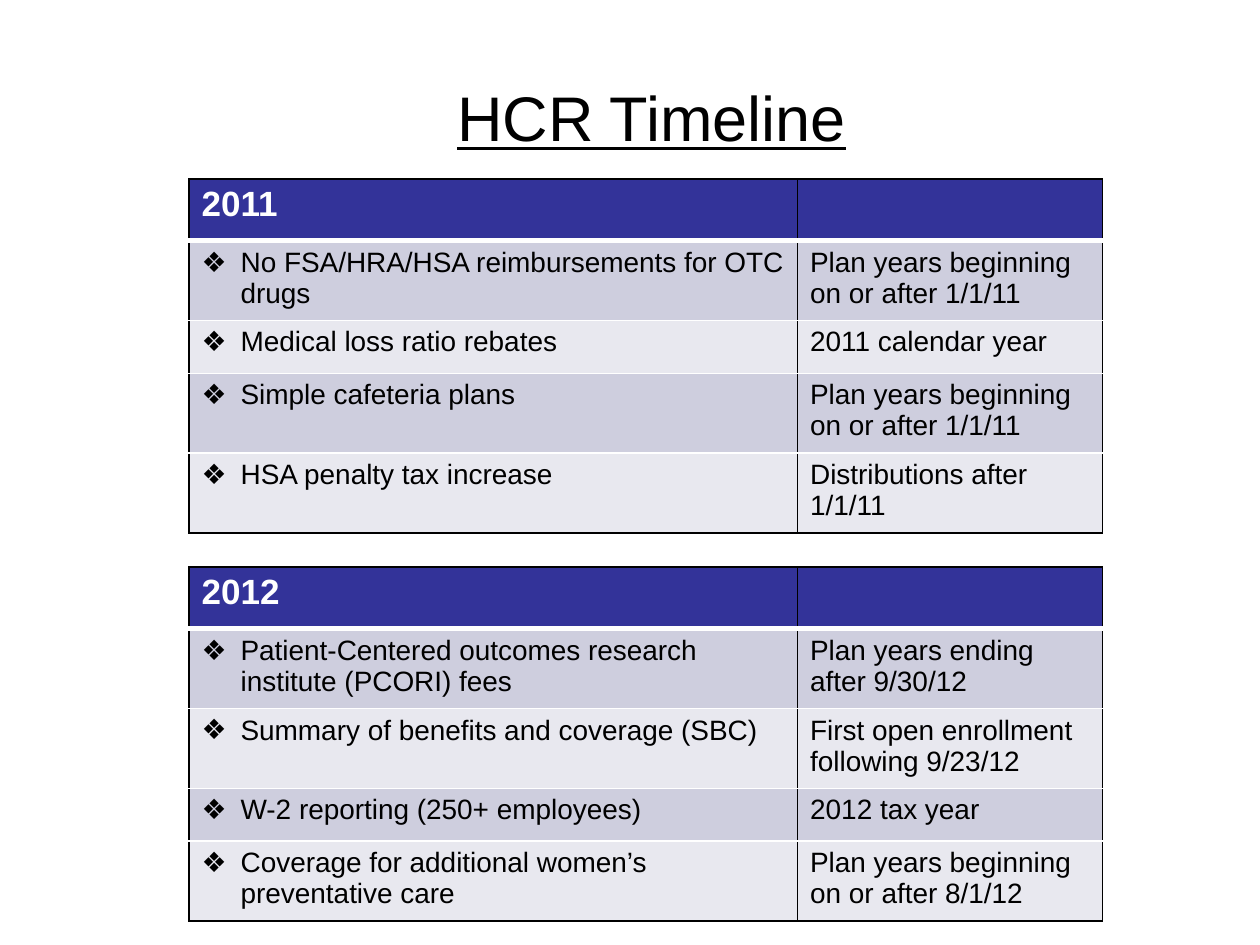
from lxml.etree import SubElement
from pptx import Presentation
from pptx.dml.color import RGBColor
from pptx.enum.text import MSO_ANCHOR, PP_ALIGN
from pptx.oxml import parse_xml
from pptx.oxml.ns import nsdecls, qn
from pptx.util import Inches, Pt

TITLE = "HCR Timeline"
YEARS = [
    ("2011", 1.42, [
        ("No FSA/HRA/HSA reimbursements for OTC drugs", "Plan years beginning on or after 1/1/11"),
        ("Medical loss ratio rebates", "2011 calendar year"),
        ("Simple cafeteria plans", "Plan years beginning on or after 1/1/11"),
        ("HSA penalty tax increase", "Distributions after 1/1/11"),
    ]),
    ("2012", 4.5, [
        ("Patient-Centered outcomes research institute (PCORI) fees", "Plan years ending after 9/30/12"),
        ("Summary of benefits and coverage (SBC)", "First open enrollment following 9/23/12"),
        ("W-2 reporting (250+ employees)", "2012 tax year"),
        ("Coverage for additional women’s preventative care", "Plan years beginning on or after 8/1/12"),
    ]),
]
COLORS = {"text": "000000", "header": "333399", "light": "FFFFFF",
          "odd": "CECEDE", "even": "E8E8EF"}
FONT = "Arial"
TABLE_LEFT = 1.5
COLUMN_WIDTHS = (4.83, 2.42)
HEADER_HEIGHT, ROW_HEIGHT = 0.49, 0.42
BULLET_INDENT = Inches(0.31)


def style_font(font, size, color, bold=False):
    font.name = FONT
    font.size = Pt(size)
    font.bold = bold
    font.color.rgb = RGBColor.from_string(COLORS[color])


def set_borders(cell, top, bottom):
    sides = {"lnL": ("text", 1), "lnR": ("text", 1), "lnT": top, "lnB": bottom}
    properties = cell._tc.get_or_add_tcPr()
    for position, (side, (color, width)) in enumerate(sides.items()):
        properties.insert(position, parse_xml(
            f'<a:{side} {nsdecls("a")} w="{Pt(width)}"><a:solidFill>'
            f'<a:srgbClr val="{COLORS[color]}"/></a:solidFill></a:{side}>'))


def add_bullet(paragraph):
    properties = paragraph._p.get_or_add_pPr()
    properties.set("marL", str(BULLET_INDENT))
    properties.set("indent", str(-BULLET_INDENT))
    SubElement(properties, qn("a:buFont"), typeface=FONT)
    SubElement(properties, qn("a:buChar"), char="❖")


def add_year(slide, year, top, provisions):
    rows = [(year, ""), *provisions]
    heights = [HEADER_HEIGHT] + [ROW_HEIGHT] * len(provisions)
    table = slide.shapes.add_table(
        len(rows), len(COLUMN_WIDTHS), Inches(TABLE_LEFT), Inches(top),
        Inches(sum(COLUMN_WIDTHS)), Inches(sum(heights))).table
    for column, width in zip(table.columns, COLUMN_WIDTHS):
        column.width = Inches(width)
    rules = [("text", 1), ("light", 3)] + [("light", 1)] * (len(provisions) - 1) + [("text", 1)]
    for r, row in enumerate(rows):
        table.rows[r].height = Inches(heights[r])
        fill = "header" if r == 0 else "odd" if r % 2 else "even"
        for c, text in enumerate(row):
            cell = table.cell(r, c)
            cell.fill.solid()
            cell.fill.fore_color.rgb = RGBColor.from_string(COLORS[fill])
            set_borders(cell, rules[r], rules[r + 1])
            cell.text_frame.text = text
            paragraph = cell.text_frame.paragraphs[0]
            if r and c == 0:
                add_bullet(paragraph)
            if r == 0:
                style_font(paragraph.font, 20, "light", True)
            else:
                style_font(paragraph.font, 16, "text")
            for run in paragraph.runs:
                style_font(run.font, 16 if r else 20, "text" if r else "light", r == 0)


def main():
    deck = Presentation()
    deck.slide_width, deck.slide_height = Inches(10), Inches(7.5)
    slide = deck.slides.add_slide(deck.slide_layouts[6])

    title = slide.shapes.add_textbox(Inches(0.67), Inches(0.3), Inches(9), Inches(1.25)).text_frame
    title.word_wrap = True
    title.vertical_anchor = MSO_ANCHOR.MIDDLE
    title.text = TITLE
    heading = title.paragraphs[0]
    heading.alignment = PP_ALIGN.CENTER
    style_font(heading.runs[0].font, 36, "text")
    heading.runs[0].font.underline = True

    for year, top, provisions in YEARS:
        add_year(slide, year, top, provisions)
    deck.save("out.pptx")


if __name__ == "__main__":
    main()
